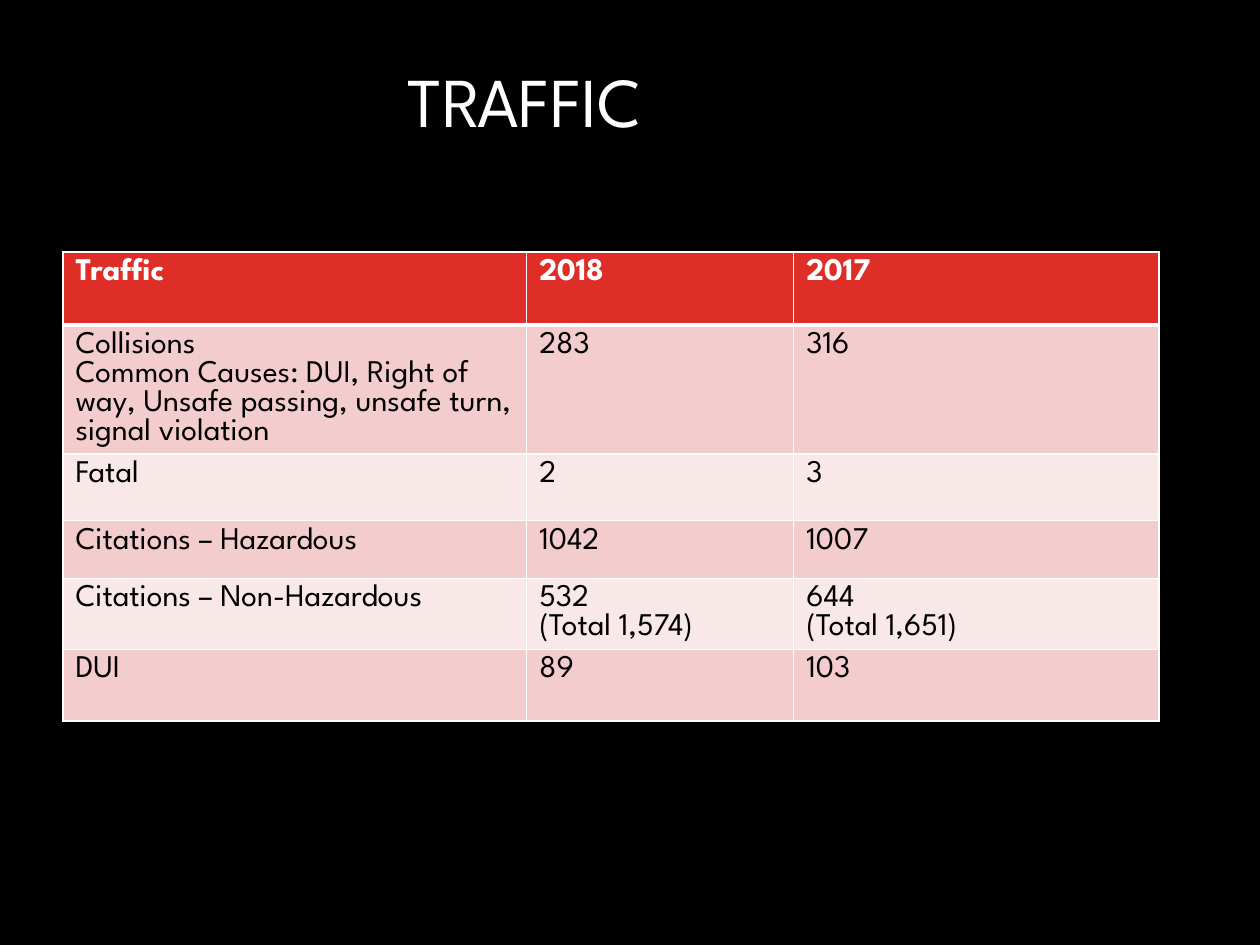
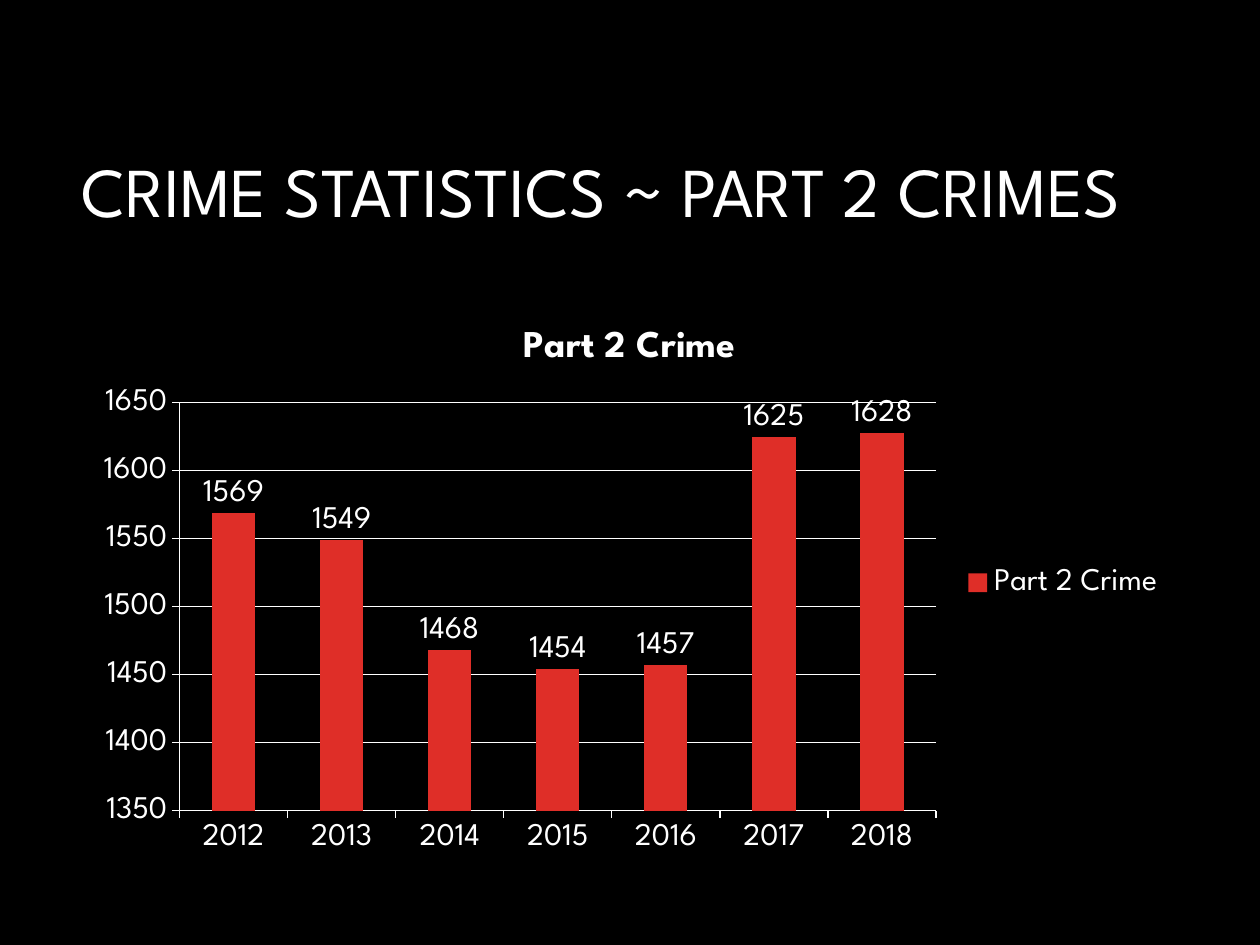
"""Build the traffic and Part 2 crime statistics slides."""
from lxml import etree
from pptx import Presentation
from pptx import util as u
from pptx.chart import data as chart_data
from pptx.dml import color
from pptx.enum import chart as ch
from pptx.enum import text
from pptx.oxml import ns

COLORS = {
    "background": "000000",
    "light": "FFFFFF",
    "dark": "000000",
    "accent": "DF2E28",
    "band_strong": "F3CDCD",
    "band_soft": "F9E8E8",
}
FONT = "League Spartan"
BODY_SIZE = 18
TITLE_SIZE = 40
TITLE_ONLY = 5
THIN, THICK = 1, 3

TRAFFIC_ROWS = [
    ("Traffic", "2018", "2017"),
    ("Collisions\nCommon Causes: DUI, Right of way, Unsafe passing, "
     "unsafe turn, signal violation", "283", "316"),
    ("Fatal", "2", "3"),
    ("Citations – Hazardous", "1042", "1007"),
    ("Citations – Non-Hazardous", "532\n(Total 1,574)", "644\n(Total 1,651)"),
    ("DUI", "89", "103"),
]
COLUMN_WIDTHS = (265, 152.6, 208.8)
ROW_HEIGHTS = (41.8, 29.5, 38.2, 33.1, 33.8, 41)

CRIME_BY_YEAR = {
    "2012": 1569, "2013": 1549, "2014": 1468, "2015": 1454,
    "2016": 1457, "2017": 1625, "2018": 1628,
}


def rgb(name):
    return color.RGBColor.from_string(COLORS[name])


def points(*lengths):
    return [u.Pt(length) for length in lengths]


def style_font(font, size, color_name, bold=False):
    font.name = FONT
    font.size = u.Pt(size)
    font.bold = bold
    font.color.rgb = rgb(color_name)


def paint(fill, color_name):
    fill.solid()
    fill.fore_color.rgb = rgb(color_name)


def add_titled_slide(deck, heading, box):
    slide = deck.slides.add_slide(deck.slide_layouts[TITLE_ONLY])
    title = slide.shapes.title
    title.left, title.top, title.width, title.height = points(*box)
    frame = title.text_frame
    frame.text = heading
    frame.word_wrap = True
    frame.auto_size = text.MSO_AUTO_SIZE.NONE
    frame.vertical_anchor = text.MSO_ANCHOR.MIDDLE
    paragraph = frame.paragraphs[0]
    paragraph.alignment = text.PP_ALIGN.CENTER
    paragraph.line_spacing = 0.9
    style_font(paragraph.runs[0].font, TITLE_SIZE, "light")
    return slide


def add_cell_borders(cell, widths):
    properties = cell._tc.get_or_add_tcPr()
    for side, width in widths.items():
        line = etree.SubElement(properties, ns.qn(f"a:ln{side}"), w=str(u.Pt(width)))
        fill = etree.SubElement(line, ns.qn("a:solidFill"))
        etree.SubElement(fill, ns.qn("a:srgbClr"), val=COLORS["light"])


def fill_cell(cell, content, row_index):
    is_header = row_index == 0
    cell.text_frame.text = content
    for paragraph in cell.text_frame.paragraphs:
        for run in paragraph.runs:
            style_font(run.font, BODY_SIZE, "light" if is_header else "dark", is_header)
    add_cell_borders(cell, {
        "L": THIN,
        "R": THIN,
        "T": THICK if row_index == 1 else THIN,
        "B": THICK if is_header else THIN,
    })
    band = "band_strong" if row_index % 2 else "band_soft"
    paint(cell.fill, "accent" if is_header else band)


def add_traffic_table(slide, rows, left, top):
    frame = slide.shapes.add_table(
        len(rows), len(COLUMN_WIDTHS),
        *points(left, top, sum(COLUMN_WIDTHS), sum(ROW_HEIGHTS)))
    table = frame.table
    for column, width in zip(table.columns, COLUMN_WIDTHS):
        column.width = u.Pt(width)
    for row_index, (row, height) in enumerate(zip(table.rows, ROW_HEIGHTS)):
        row.height = u.Pt(height)
        for cell, content in zip(row.cells, rows[row_index]):
            fill_cell(cell, content, row_index)


def style_axis(axis):
    axis.major_tick_mark = ch.XL_TICK_MARK.OUTSIDE
    axis.minor_tick_mark = ch.XL_TICK_MARK.NONE
    style_line(axis.format.line)


def style_line(line):
    line.color.rgb = rgb("light")
    line.width = u.Pt(0.75)


def add_crime_chart(slide, name, counts, box):
    crime = chart_data.CategoryChartData()
    crime.categories = list(counts)
    crime.add_series(name, list(counts.values()))
    chart = slide.shapes.add_chart(
        ch.XL_CHART_TYPE.COLUMN_CLUSTERED, *points(*box), crime).chart
    style_font(chart.font, BODY_SIZE, "light")

    chart.has_title = True
    heading = chart.chart_title.text_frame
    heading.text = name
    style_font(heading.paragraphs[0].runs[0].font, 21.6, "light", bold=True)
    chart.chart_title.include_in_layout = False

    chart.has_legend = True
    chart.legend.position = ch.XL_LEGEND_POSITION.RIGHT
    chart.legend.include_in_layout = False

    style_axis(chart.category_axis)
    count_axis = chart.value_axis
    style_axis(count_axis)
    count_axis.minimum_scale, count_axis.maximum_scale = 1350, 1650
    count_axis.major_unit = 50
    count_axis.has_major_gridlines = True
    style_line(count_axis.major_gridlines.format.line)

    plot = chart.plots[0]
    plot.gap_width = 150
    plot.vary_by_categories = False
    paint(plot.series[0].format.fill, "accent")
    plot.has_data_labels = True
    plot.data_labels.show_value = True
    plot.data_labels.position = ch.XL_LABEL_POSITION.OUTSIDE_END
    style_font(plot.data_labels.font, BODY_SIZE, "light")


def main():
    deck = Presentation()
    deck.slide_width, deck.slide_height = points(720, 540)
    paint(deck.slide_master.background.fill, "background")

    traffic = add_titled_slide(deck, "TRAFFIC", (49, 12.2, 501.8, 95.8))
    add_traffic_table(traffic, TRAFFIC_ROWS, 36, 144)

    crimes = add_titled_slide(
        deck, "CRIME STATISTICS ~ PART 2 CRIMES ", (23.8, 60.5, 649.4, 101.5))
    add_crime_chart(crimes, "Part 2 Crime", CRIME_BY_YEAR, (46.8, 172.8, 626.4, 320.4))

    deck.save("out.pptx")


if __name__ == "__main__":
    main()
